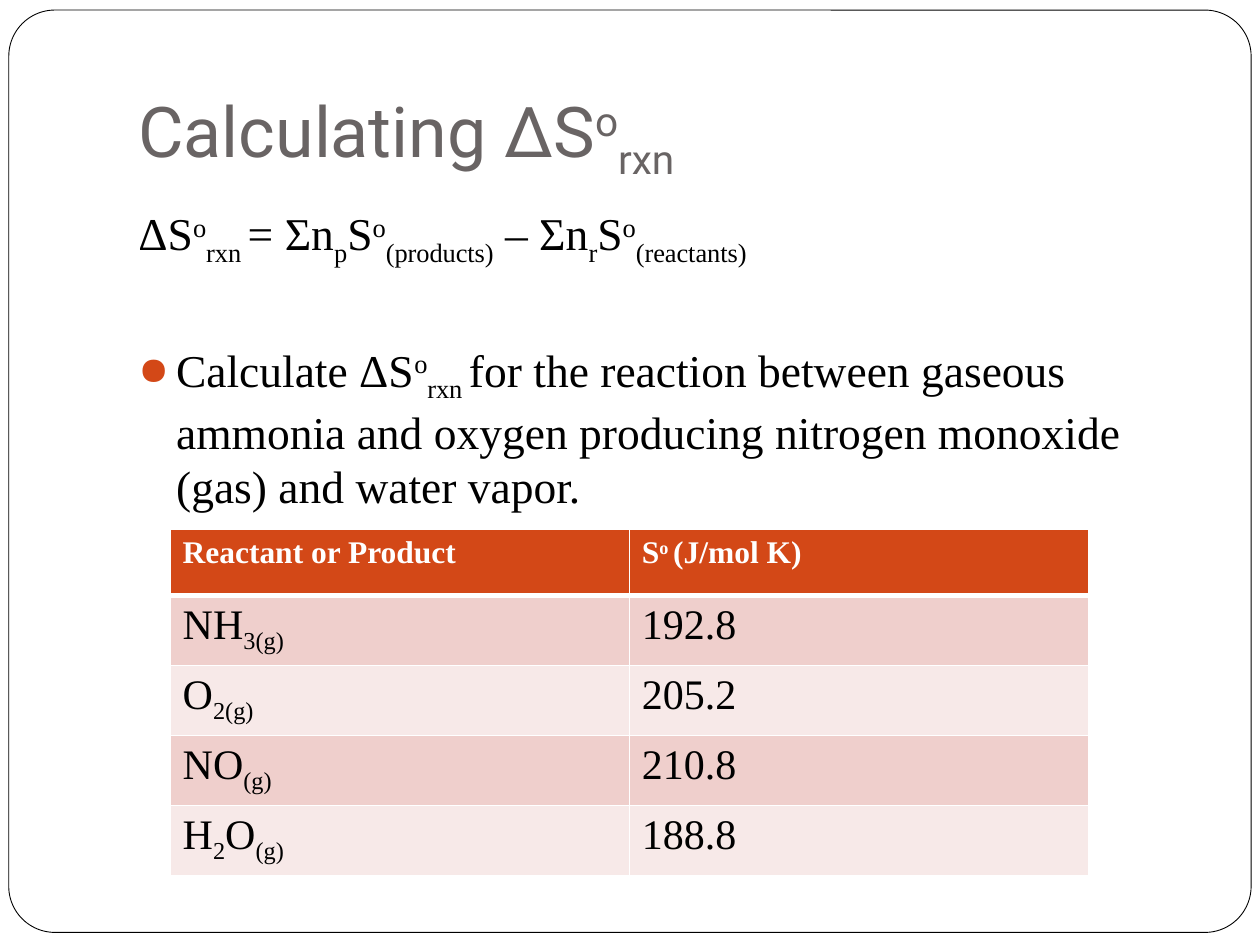
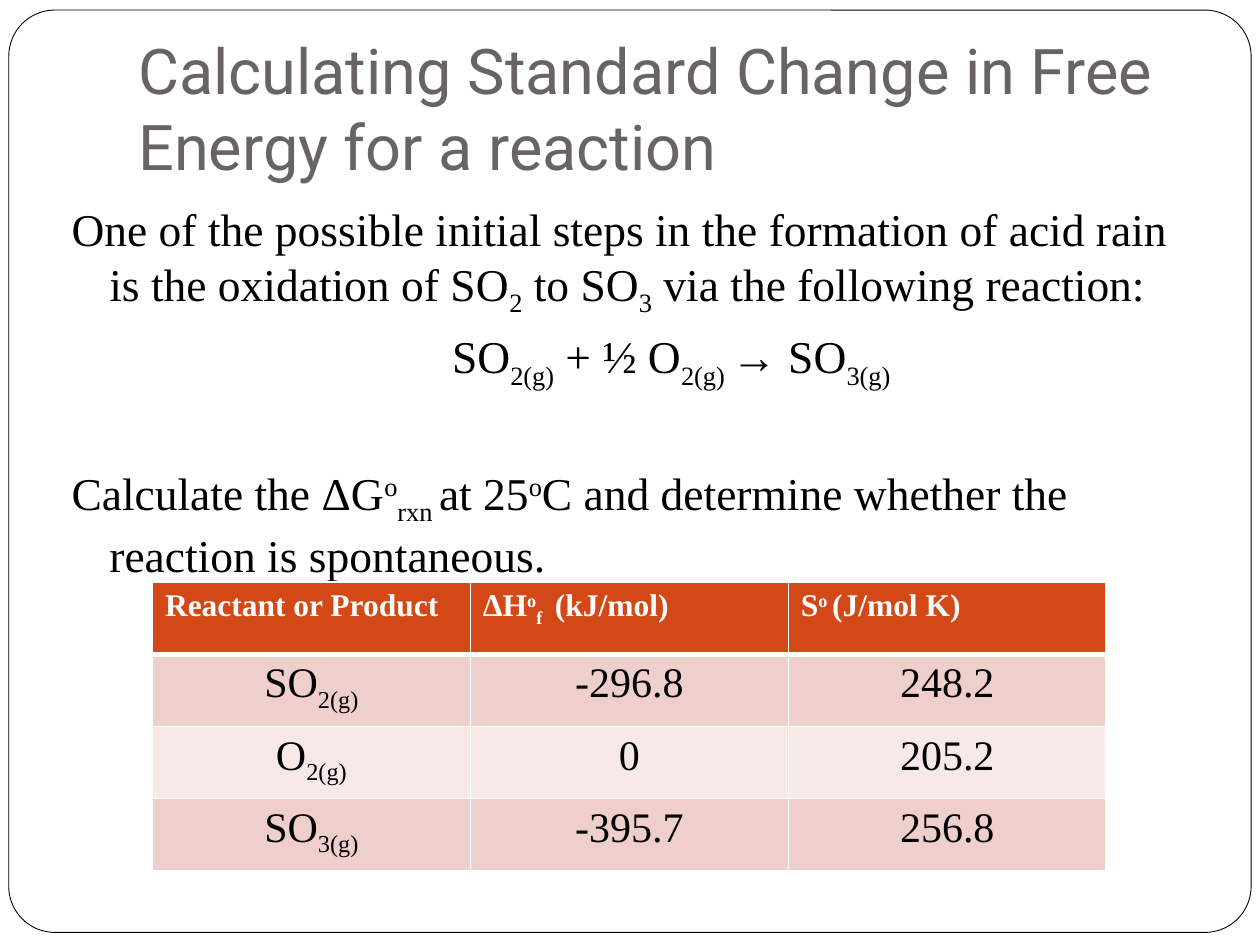
import pptx
import pptx.util
import pptx.dml.color
import pptx.enum.shapes
import pptx.enum.text
import pptx.oxml
import pptx.oxml.ns

WIDTH, HEIGHT = pptx.util.Inches(10), pptx.util.Inches(7.5)
COLUMNS, ROWS = 100, 75
BASELINES = {"^": "30000", "_": "-25000"}
ALIGN = pptx.enum.text.PP_ALIGN
ANCHOR = pptx.enum.text.MSO_ANCHOR

WHITE, BLACK, GREY, ORANGE = "FFFFFF", "000000", "696464", "D34817"
BANDS = ["EFCFCC", "F7E9E8"]

TITLE = {"name": "Roboto", "size": 40, "color": GREY}
LONG_TITLE = {**TITLE, "size": 36}
BODY = {"name": "Times New Roman", "size": 26, "color": BLACK}
CELL = {**BODY, "size": 24, "bold": False}
HEADER = {**BODY, "size": 18, "color": WHITE, "bold": True}

FRAME_BOX = (0.7, 0.8, 98.6, 73.2)
TITLE_BOX = (10, 3, 85, 12.5)
HANGING = 3
GAP = 5.8
SECTION_GAP = 42.5


def rgb(value):
    return pptx.dml.color.RGBColor.from_string(value)


def across(columns):
    return round(WIDTH * columns / COLUMNS)


def down(rows):
    return round(HEIGHT * rows / ROWS)


def place(box):
    left, top, width, height = box
    return across(left), down(top), across(width), down(height)


def add_xml(parent, tag, **attributes):
    element = pptx.oxml.parse_xml(f"<a:{tag} {pptx.oxml.ns.nsdecls('a')}/>")
    for key, value in attributes.items():
        element.set(key, str(value))
    parent.append(element)
    return element


def write(p, text, style):
    for piece in text.split("|"):
        baseline = BASELINES.get(piece[:1])
        r = p.add_run()
        r.text = piece[1:] if baseline else piece
        for key, value in style.items():
            if key == "color":
                r.font.color.rgb = rgb(value)
            else:
                setattr(r.font, key, pptx.util.Pt(value) if key == "size" else value)
        if baseline:
            r.font._element.set("baseline", baseline)


def add_text_frame(slide, box, **settings):
    tf = slide.shapes.add_textbox(*place(box)).text_frame
    tf.word_wrap = True
    for key, value in settings.items():
        setattr(tf, key, value)
    return tf


def add_frame(slide, box):
    rounded = pptx.enum.shapes.MSO_SHAPE.ROUNDED_RECTANGLE
    sp = slide.shapes.add_shape(rounded, *place(box))
    sp.adjustments[0] = 0.05
    sp.shadow.inherit = False
    sp.fill.solid()
    sp.fill.fore_color.rgb = rgb(WHITE)
    sp.line.color.rgb = rgb(BLACK)
    sp.line.width = pptx.util.Pt(0.5)


def add_title(slide, box, text, style):
    tf = add_text_frame(slide, box, vertical_anchor=ANCHOR.BOTTOM, margin_bottom=down(1))
    write(tf.paragraphs[0], text, style)


def add_body(slide, box, paragraphs):
    tf = add_text_frame(slide, box)
    for i, (text, options) in enumerate(paragraphs):
        p = tf.add_paragraph() if i else tf.paragraphs[0]
        p.space_before = pptx.util.Pt(options.get("gap", GAP))
        pPr = p._p.get_or_add_pPr()
        pPr.set("marL", str(across(options.get("margin", HANGING))))
        pPr.set("indent", str(across(options.get("indent", -HANGING))))
        if "bullet" in options:
            add_xml(add_xml(pPr, "buClr"), "srgbClr", val=ORANGE)
            add_xml(pPr, "buSzPct", val=85000)
            add_xml(pPr, "buChar", char=options["bullet"])
        write(p, text, BODY)


def add_borders(cell, is_header):
    tcPr = cell._tc.get_or_add_tcPr()
    for side in ("lnL", "lnR", "lnT", "lnB"):
        points = 3 if is_header and side == "lnB" else 1
        ln = add_xml(tcPr, side, w=pptx.util.Pt(points))
        add_xml(add_xml(ln, "solidFill"), "srgbClr", val=WHITE)


def add_entropy_table(slide, box, rows, align):
    count, width = len(rows), len(rows[0])
    table = slide.shapes.add_table(count, width, *place(box)).table
    for i, row in enumerate(rows):
        for j, text in enumerate(row):
            cell = table.cell(i, j)
            add_borders(cell, i == 0)
            cell.fill.solid()
            cell.fill.fore_color.rgb = rgb(BANDS[(i - 1) % 2] if i else ORANGE)
            p = cell.text_frame.paragraphs[0]
            p.alignment = align if i else ALIGN.LEFT
            write(p, text, CELL if i else HEADER)


def add_problem_slide(prs, title, title_style, body_box, paragraphs, table_box, rows, align):
    slide = prs.slides.add_slide(prs.slide_layouts[6])
    add_frame(slide, FRAME_BOX)
    add_title(slide, TITLE_BOX, title, title_style)
    add_body(slide, body_box, paragraphs)
    add_entropy_table(slide, table_box, rows, align)


def main():
    prs = pptx.Presentation()
    prs.slide_width, prs.slide_height = WIDTH, HEIGHT

    add_problem_slide(
        prs, "Calculating ΔS|^o|_rxn", TITLE,
        (10, 15.8, 85, 50),
        [
            ("ΔS|^o|_rxn |= Σn|_p|S|^o|_(products)| – Σn|_r|S|^o|_(reactants)", {}),
            ("Calculate ΔS|^o|_rxn |for the reaction between gaseous ammonia and oxygen "
             "producing nitrogen monoxide (gas) and water vapor.",
             {"gap": SECTION_GAP, "bullet": "●"}),
        ],
        (13.5, 42, 72.9, 26.3),
        [
            ["Reactant or Product", "S|^o |(J/mol K)"],
            ["NH|_3(g)", "192.8"],
            ["O|_2(g)", "205.2"],
            ["NO|_(g)", "210.8"],
            ["H|_2|O|_(g)", "188.8"],
        ],
        ALIGN.LEFT)

    add_problem_slide(
        prs, "Calculating Standard Change in Free Energy for a reaction", LONG_TITLE,
        (4.7, 15.5, 90.3, 50),
        [
            ("One of the possible initial steps in the formation of acid rain is the "
             "oxidation of SO|_2| to SO|_3| via the following reaction:", {}),
            ("SO|_2(g)| + ½ O|_2(g) |→ SO|_3(g)", {"margin": 30.2, "indent": 0}),
            ("Calculate the ΔG|^o|_rxn |at 25|^o|C and determine whether the reaction "
             "is spontaneous.", {"gap": SECTION_GAP}),
        ],
        (12.1, 46.2, 75.7, 22.9),
        [
            ["Reactant or Product", "ΔH|^o|_f | (kJ/mol)", "S|^o |(J/mol K)"],
            ["SO|_2(g)", "-296.8", "248.2"],
            ["O|_2(g)", "0", "205.2"],
            ["SO|_3(g)", "-395.7", "256.8"],
        ],
        ALIGN.CENTER)

    prs.save("out.pptx")


if __name__ == "__main__":
    main()
